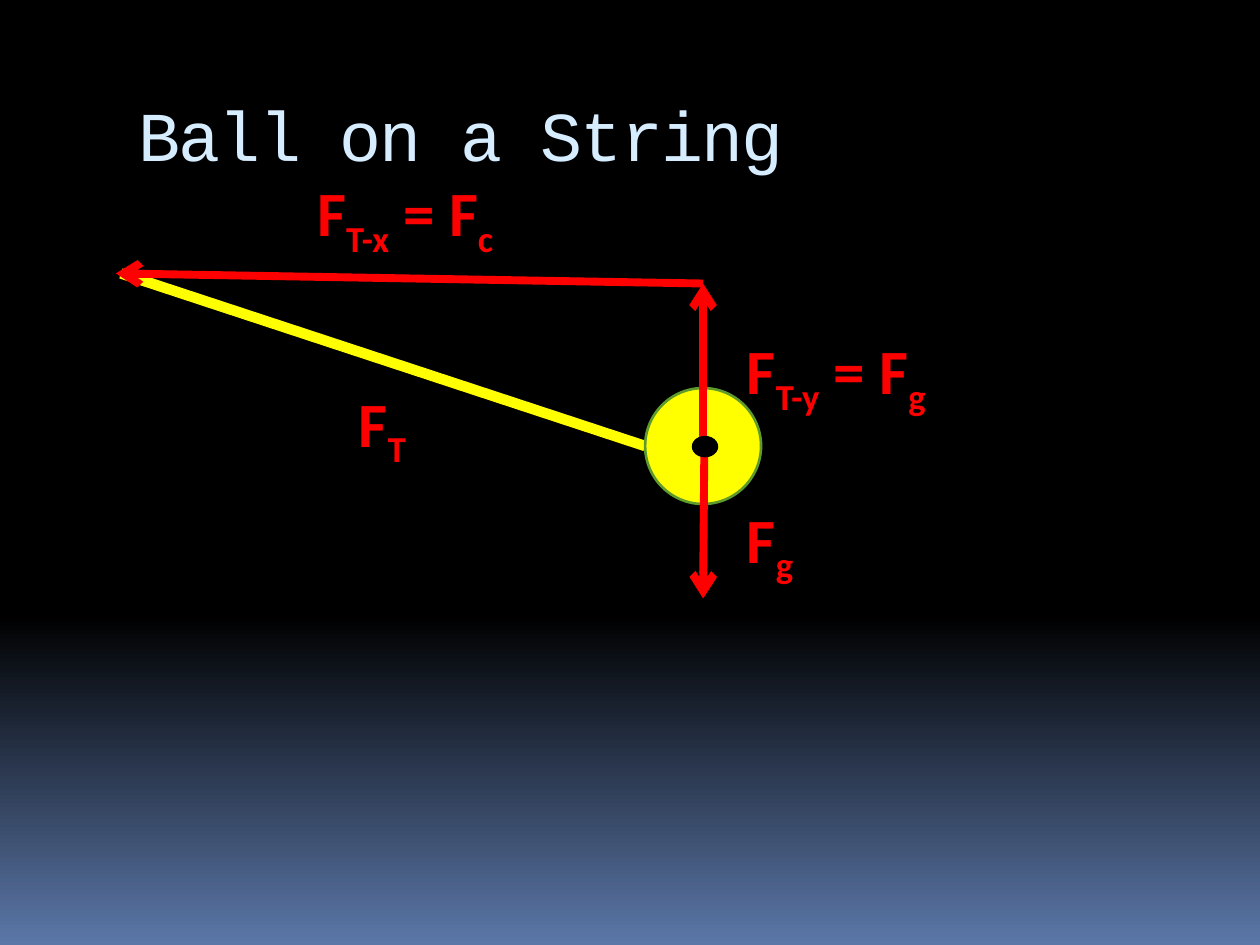
from copy import deepcopy

from lxml.etree import SubElement
from pptx import Presentation
from pptx.dml.color import RGBColor
from pptx.enum.shapes import MSO_CONNECTOR, MSO_SHAPE
from pptx.enum.text import MSO_ANCHOR, MSO_AUTO_SIZE
from pptx.oxml.ns import qn
from pptx.util import Inches, Pt

YELLOW, RED, BLACK = "FFFF00", "FF0000", "000000"
color = RGBColor.from_string

deck = Presentation()
deck.slide_width, deck.slide_height = Inches(10), Inches(7.5)
page = deck.slides.add_slide(deck.slide_layouts[6])

# Background: black down to 65 %, then fading to blue
backdrop = page.background.fill
backdrop.gradient()
backdrop.gradient_angle = 270
stop_list = page.element.find(".//" + qn("a:gsLst"))
stop_list.insert(0, deepcopy(stop_list[0]))
for stop, (position, tint) in zip(
    backdrop.gradient_stops, [(0, BLACK), (0.65, BLACK), (1, "5B77A8")]
):
    stop.position = position
    stop.color.rgb = color(tint)


def add_text(left, top, width, height, pieces, subscripts=(), **font_values):
    """Add a one-line text box; pieces whose index is in subscripts are lowered."""
    box = page.shapes.add_textbox(*map(Inches, (left, top, width, height)))
    box.text_frame.word_wrap = True
    para = box.text_frame.paragraphs[0]
    for index, piece in enumerate(pieces):
        span = para.add_run()
        span.text = piece
        tint = font_values["tint"]
        for name, value in font_values.items():
            if name != "tint":
                setattr(span.font, name, value)
        span.font.color.rgb = color(tint)
        if index in subscripts:
            span.font._element.set("baseline", "-25000")
    return box


def add_line(start, end, tint, width, arrow=True):
    line = page.shapes.add_connector(
        MSO_CONNECTOR.STRAIGHT, *map(Inches, (*start, *end))
    )
    line.line.color.rgb = color(tint)
    line.line.width = Pt(width)
    if arrow:
        SubElement(line.get_or_add_ln(), qn("a:tailEnd"), type="arrow")
    SubElement(line.element.spPr, qn("a:effectLst"))


title = add_text(1, 0.56, 8.5, 1, ["Ball on a String"],
                 name="Courier New", size=Pt(40), tint="D6ECFF")
title.text_frame.vertical_anchor = MSO_ANCHOR.MIDDLE
title.text_frame.paragraphs[0].runs[0].font._element.set("spc", "-100")

# String, ball, force arrows and the ball's centre, from back to front
add_line((5.12, 3.54), (0.96, 2.17), YELLOW, 6, arrow=False)

ball = page.shapes.add_shape(
    MSO_SHAPE.OVAL, Inches(5.12), Inches(3.08), Inches(0.92), Inches(0.92)
)
ball.line.color.rgb = color("5E9B2C")
ball.line.width = Pt(1.5)

corner = (5.58, 2.25)
for start, end in [
    ((5.59, 3.58), (5.58, 4.75)),
    ((5.58, 3.58), corner),
    (corner, (0.92, 2.17)),
]:
    add_line(start, end, RED, 4.5)

center = page.shapes.add_shape(
    MSO_SHAPE.OVAL, Inches(5.49), Inches(3.46), Inches(0.21), Inches(0.17)
)
center.line.fill.background()

for oval, tint in [(ball, YELLOW), (center, BLACK)]:
    oval.shadow.inherit = False
    oval.fill.solid()
    oval.fill.fore_color.rgb = color(tint)

# Force labels: every second piece is a subscript
for left, top, width, pieces in [
    (5.83, 3.92, 0.83, ["F", "g"]),
    (2.75, 3, 0.83, ["F", "T"]),
    (5.83, 2.58, 2.17, ["F", "T-y", " = F", "g"]),
    (2.42, 1.33, 2.17, ["F", "T-x", " = F", "c"]),
]:
    label = add_text(left, top, width, 0.71, pieces, subscripts=(1, 3),
                     name="Calibri", size=Pt(36), bold=True, tint=RED)
    label.text_frame.auto_size = MSO_AUTO_SIZE.SHAPE_TO_FIT_TEXT

deck.save("out.pptx")
